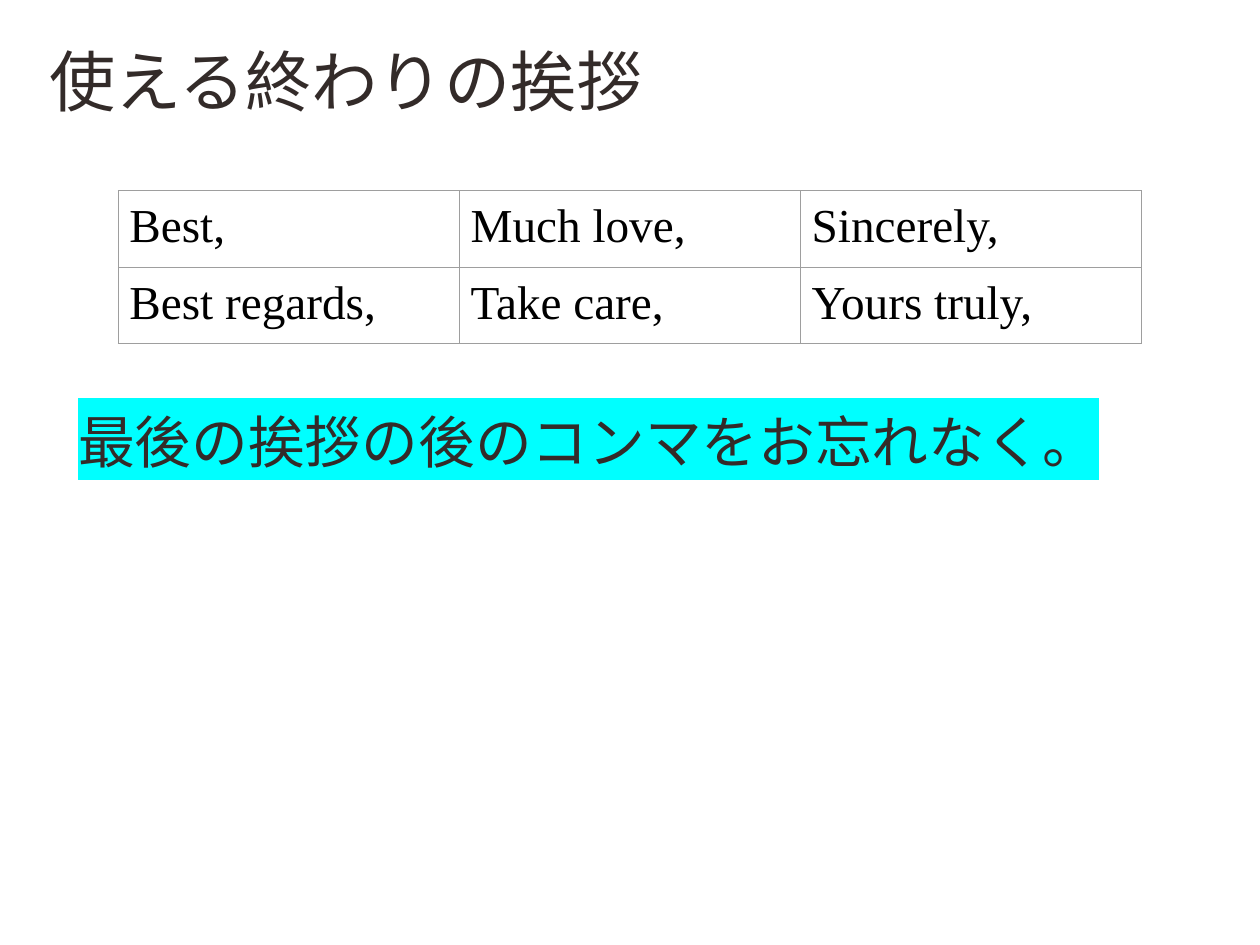
from lxml.etree import SubElement
from pptx import Presentation
from pptx.dml.color import RGBColor
from pptx.oxml.ns import qn
from pptx.util import Cm, Pt

FONT = "Times New Roman"
BROWN = RGBColor(0x33, 0x2B, 0x29)
BLACK = RGBColor(0x00, 0x00, 0x00)
CYAN = RGBColor(0x00, 0xFF, 0xFF)
GREY = RGBColor(0x9E, 0x9E, 0x9E)
INSET = Cm(0.25)

CLOSINGS = [
    ["Best,", "Much love,", "Sincerely,"],
    ["Best regards,", "Take care,", "Yours truly,"],
]


def add_run(paragraph, text, size, color):
    run = paragraph.add_run()
    run.text = text
    run.font.size = Pt(size)
    run.font.name = FONT
    run.font.color.rgb = color
    return run


def highlight(run, color):
    properties = run.font._element
    mark = SubElement(properties, qn("a:highlight"))
    SubElement(mark, qn("a:srgbClr"), val=str(color))
    # The highlight belongs right after the text fill
    properties.find(qn("a:solidFill")).addnext(mark)


def add_heading(slide, left, top, width, height, text, size):
    frame = slide.shapes.add_textbox(left, top, width, height).text_frame
    frame.word_wrap = True
    frame.margin_left = frame.margin_right = INSET
    frame.margin_top = frame.margin_bottom = INSET
    paragraph = frame.paragraphs[0]
    paragraph.line_spacing = 0.9
    return add_run(paragraph, text, size, BROWN)


def set_borders(cell, color, width):
    properties = cell._tc.get_or_add_tcPr()
    for position, side in enumerate(("lnL", "lnR", "lnT", "lnB")):
        line = SubElement(properties, qn(f"a:{side}"), w=str(width))
        fill = SubElement(line, qn("a:solidFill"))
        SubElement(fill, qn("a:srgbClr"), val=str(color))
        properties.insert(position, line)


def add_closings_table(slide, left, top, width, height, rows):
    table = slide.shapes.add_table(
        len(rows), len(rows[0]), left, top, width, height).table
    table.first_row = table.horz_banding = False
    for row, texts in enumerate(rows):
        for column, text in enumerate(texts):
            cell = table.cell(row, column)
            cell.margin_left = cell.margin_right = INSET
            cell.margin_top = cell.margin_bottom = Cm(0.22)
            cell.fill.background()
            set_borders(cell, GREY, Pt(0.75))
            add_run(cell.text_frame.paragraphs[0], text, 30, BLACK)


def main():
    presentation = Presentation()
    presentation.slide_width = Cm(28.22)
    presentation.slide_height = Cm(21.16)
    slide = presentation.slides.add_slide(presentation.slide_layouts[6])

    # Title
    add_heading(slide, Cm(0.85), Cm(0.85), Cm(26.5), Cm(2.54),
                "使える終わりの挨拶", 42)

    # Reminder about the comma
    reminder = add_heading(slide, Cm(1.5), Cm(9.04), Cm(26.5), Cm(4.47),
                           "最後の挨拶の後のコンマをお忘れなく。", 36)
    highlight(reminder, CYAN)

    # Closing phrases
    add_closings_table(slide, Cm(2.65), Cm(4.27), Cm(22.92), Cm(3.36), CLOSINGS)

    presentation.save("out.pptx")


if __name__ == "__main__":
    main()
